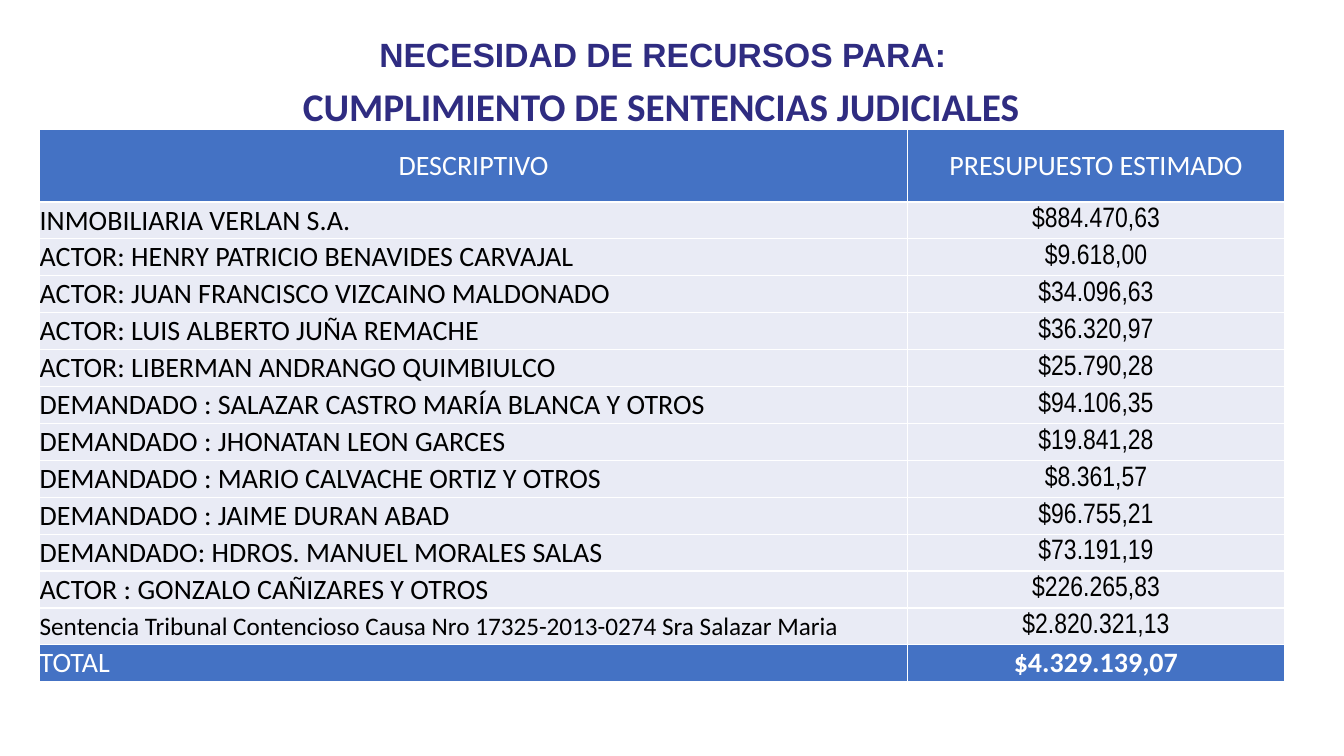
"""Builds the slide on the funds needed to comply with court rulings."""
from lxml import etree
from pptx import Presentation, util as u
from pptx.dml.color import RGBColor
from pptx.enum import text
from pptx.oxml import ns

NAVY = RGBColor(0x2F, 0x2C, 0x81)
BLUE = RGBColor(0x44, 0x72, 0xC4)
PALE = RGBColor(0xE9, 0xEB, 0xF5)
WHITE = RGBColor(0xFF, 0xFF, 0xFF)
BLACK = RGBColor(0x00, 0x00, 0x00)

RULINGS = [
    ("INMOBILIARIA VERLAN S.A.", "$884.470,63"),
    ("ACTOR: HENRY PATRICIO BENAVIDES CARVAJAL", "$9.618,00"),
    ("ACTOR: JUAN FRANCISCO VIZCAINO MALDONADO", "$34.096,63"),
    ("ACTOR: LUIS ALBERTO JUÑA REMACHE", "$36.320,97"),
    ("ACTOR: LIBERMAN ANDRANGO QUIMBIULCO", "$25.790,28"),
    ("DEMANDADO : SALAZAR CASTRO MARÍA BLANCA Y OTROS", "$94.106,35"),
    ("DEMANDADO : JHONATAN LEON GARCES", "$19.841,28"),
    ("DEMANDADO : MARIO CALVACHE ORTIZ Y OTROS", "$8.361,57"),
    ("DEMANDADO : JAIME DURAN ABAD", "$96.755,21"),
    ("DEMANDADO: HDROS. MANUEL MORALES SALAS", "$73.191,19"),
    ("ACTOR : GONZALO CAÑIZARES Y OTROS", "$226.265,83"),
    ("Sentencia Tribunal Contencioso Causa Nro 17325-2013-0274 Sra Salazar Maria",
     "$2.820.321,13"),
]


class Board:
    """Holds the style and the current slide."""

    base = {"name": "Calibri", "size": u.Pt(20), "bold": False}

    def __init__(self, slide):
        self.slide = slide

    def put_words(self, frame, words, color, align, **style):
        paragraph = frame.paragraphs[0]
        paragraph.alignment = align
        run = paragraph.add_run()
        run.text = words
        for key, value in {**self.base, **style}.items():
            setattr(run.font, key, value)
        run.font.color.rgb = color

    def heading(self, words, left, top, width, height, wrap, **style):
        box = self.slide.shapes.add_textbox(
            u.Cm(left), u.Cm(top), u.Cm(width), u.Cm(height))
        box.text_frame.word_wrap = wrap
        box.text_frame.auto_size = text.MSO_AUTO_SIZE.SHAPE_TO_FIT_TEXT
        self.put_words(box.text_frame, words, NAVY, text.PP_ALIGN.CENTER,
                       bold=True, **style)

    def grid(self, left, top, widths, heights):
        table = self.slide.shapes.add_table(
            len(heights), len(widths), u.Cm(left), u.Cm(top),
            u.Cm(sum(widths)), u.Cm(sum(heights))).table
        table.first_row = table.horz_banding = False
        for column, width in zip(table.columns, widths):
            column.width = u.Cm(width)
        for row, height in zip(table.rows, heights):
            row.height = u.Cm(height)
        return table

    def cell(self, cell, words, fill, color, align, **style):
        layout = {"margin_left": 0, "margin_right": 0, "margin_top": 0,
                  "margin_bottom": 0, "vertical_anchor": text.MSO_ANCHOR.MIDDLE}
        for key, value in layout.items():
            setattr(cell, key, value)
        properties = cell._tc.get_or_add_tcPr()
        for side in ("lnL", "lnR", "lnT", "lnB"):
            border = etree.SubElement(properties, ns.qn(f"a:{side}"), w=str(u.Pt(1)))
            paint = etree.SubElement(border, ns.qn("a:solidFill"))
            etree.SubElement(paint, ns.qn("a:srgbClr"), val=str(WHITE))
        cell.fill.solid()
        cell.fill.fore_color.rgb = fill
        self.put_words(cell.text_frame, words, color, align, **style)


def main():
    deck = Presentation()
    deck.slide_width, deck.slide_height = u.Cm(33.87), u.Cm(19.05)
    board = Board(deck.slides.add_slide(deck.slide_layouts[6]))
    board.heading("CUMPLIMIENTO DE SENTENCIAS JUDICIALES",
                  6.86, 1.96, 19.6, 1.45, True, size=u.Pt(28))
    board.heading("NECESIDAD DE RECURSOS PARA: ",
                  9.22, 0.74, 15.2, 1.28, False, size=u.Pt(24), name="Arial")

    left, center = text.PP_ALIGN.LEFT, text.PP_ALIGN.CENTER
    last = len(RULINGS) + 1
    budget = board.grid(1, 3.26, [21.87, 9.5], [1.83] + [0.93] * last)
    for column, title in enumerate(("DESCRIPTIVO", "PRESUPUESTO ESTIMADO")):
        board.cell(budget.cell(0, column), title, BLUE, WHITE, center)
    for row, (party, amount) in enumerate(RULINGS, 1):
        size = u.Pt(18 if party.startswith("Sentencia") else 20)
        board.cell(budget.cell(row, 0), party, PALE, BLACK, left, size=size)
        board.cell(budget.cell(row, 1), amount, PALE, BLACK, center,
                   name="Arial Narrow")
    board.cell(budget.cell(last, 0), "TOTAL", BLUE, WHITE, left)
    board.cell(budget.cell(last, 1), "$4.329.139,07", BLUE, WHITE, center, bold=True)
    deck.save("out.pptx")


if __name__ == "__main__":
    main()
